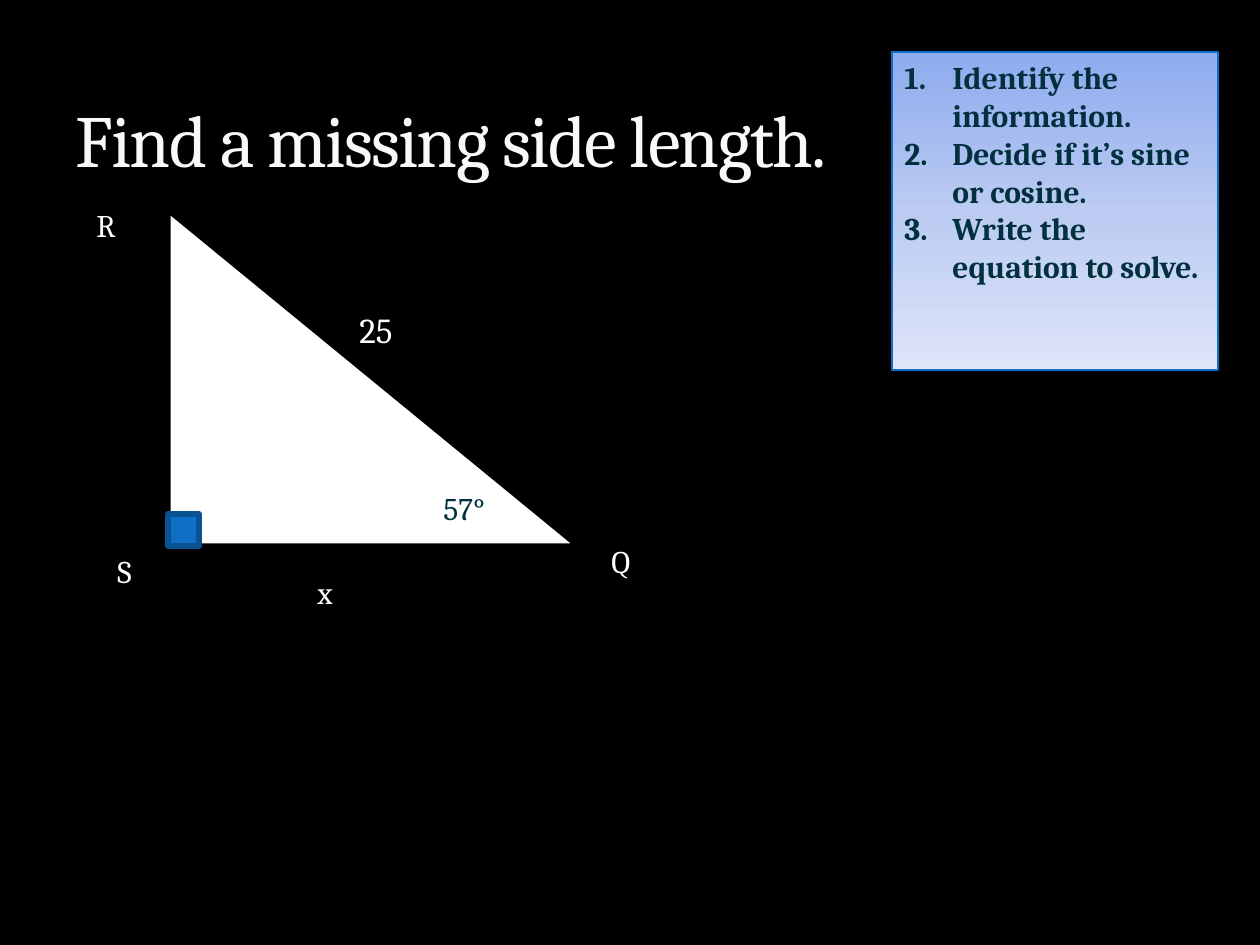
"""Build a trigonometry slide: a right triangle with labels and a list of steps."""
from copy import deepcopy

from lxml import etree
from pptx import Presentation
from pptx.dml.color import RGBColor
from pptx.enum.shapes import MSO_SHAPE
from pptx.enum.text import MSO_ANCHOR, MSO_AUTO_SIZE, PP_ALIGN
from pptx.oxml.ns import qn
from pptx.util import Pt

RECT, TRIANGLE = MSO_SHAPE.RECTANGLE, MSO_SHAPE.RIGHT_TRIANGLE
TOP, BOTTOM = MSO_ANCHOR.TOP, MSO_ANCHOR.BOTTOM
LEFT, NO_FIT = PP_ALIGN.LEFT, MSO_AUTO_SIZE.NONE
BLACK = RGBColor(0x00, 0x00, 0x00)
WHITE = RGBColor(0xFF, 0xFF, 0xFF)
OFF_WHITE = RGBColor(0xF9, 0xF9, 0xF9)
INK = RGBColor(0x02, 0x30, 0x3E)
BLUE = RGBColor(0x0F, 0x6F, 0xC6)
DARK_BLUE = RGBColor(0x0B, 0x52, 0x92)
GRADIENT = [(0, RGBColor(0x8E, 0xAB, 0xEE)),
            (0.5, RGBColor(0xBB, 0xCB, 0xF2)),
            (1, RGBColor(0xDE, 0xE5, 0xF8))]
FONT = "Cambria"
SCALE = 914400 / 126

TITLE = "Find a missing side length."
TITLE_BOX = (63, 21, 1134, 168)
STEPS = ["Identify the information.",
         "Decide if it’s sine or cosine.",
         "Write the equation to solve."]
STEPS_BOX = (892, 52, 326, 318)
STEP_INDENT = 48
SHAPES = [(TRIANGLE, (168, 210, 410, 336), WHITE, BLACK),
          (RECT, (168, 514, 31, 32), BLUE, DARK_BLUE)]
LABELS = [("Q", (599, 536, 63, 50), 18, WHITE),
          ("R", (84, 200, 63, 52), 18, WHITE),
          ("S", (105, 546, 74, 50), 18, WHITE),
          ("x", (305, 567, 63, 50), 18, WHITE),
          ("25", (347, 302, 147, 56), 20, WHITE),
          ("57°", (431, 483, 94, 50), 18, INK)]


def emu(px):
    return round(px * SCALE)


def place(box):
    return [emu(v) for v in box]


def write(s, lines, size, color, bold=False, anchor=TOP):
    tf = s.text_frame
    frame = {"word_wrap": True, "auto_size": NO_FIT, "vertical_anchor": anchor}
    for name, value in frame.items():
        setattr(tf, name, value)
    for i, line in enumerate(lines):
        p = tf.add_paragraph() if i else tf.paragraphs[0]
        p.alignment = LEFT
        r = p.add_run()
        r.text = line
        r.font.color.rgb = color
        for name, value in {"name": FONT, "size": Pt(size), "bold": bold}.items():
            setattr(r.font, name, value)
    return tf


def add_outlined(slide, kind, box, line, width):
    s = slide.shapes.add_shape(kind, *place(box))
    s.shadow.inherit = False
    s.line.color.rgb = line
    s.line.width = Pt(width)
    return s


def fill_gradient(fill):
    fill.gradient()
    fill.gradient_angle = 270
    first = fill.gradient_stops[0]
    stops = first._gs.getparent()
    stops.insert(1, deepcopy(stops[0]))
    for stop, (position, color) in zip(fill.gradient_stops, GRADIENT):
        stop.position = position
        stop.color.rgb = color


def number(p):
    pPr = p._p.get_or_add_pPr()
    pPr.set("marL", str(emu(STEP_INDENT)))
    pPr.set("indent", str(-emu(STEP_INDENT)))
    etree.SubElement(pPr, qn("a:buFont"), typeface="+mj-lt")
    etree.SubElement(pPr, qn("a:buAutoNum"), type="arabicPeriod")


def main():
    prs = Presentation()
    prs.slide_width, prs.slide_height = emu(1260), emu(945)
    slide = prs.slides.add_slide(prs.slide_layouts[5])
    slide.background.fill.solid()
    slide.background.fill.fore_color.rgb = BLACK

    title = slide.shapes.title
    title.left, title.top, title.width, title.height = place(TITLE_BOX)
    tf = write(title, [TITLE], 42, OFF_WHITE, anchor=BOTTOM)
    tf.paragraphs[0].runs[0].font._element.set("spc", "-100")

    for kind, box, fill, line in SHAPES:
        s = add_outlined(slide, kind, box, line, 3)
        s.fill.solid()
        s.fill.fore_color.rgb = fill

    for text, box, size, color in LABELS:
        write(slide.shapes.add_textbox(*place(box)), [text], size, color)

    s = add_outlined(slide, RECT, STEPS_BOX, BLUE, 0.75)
    fill_gradient(s.fill)
    for p in write(s, STEPS, 18, INK, bold=True).paragraphs:
        number(p)

    prs.save("out.pptx")


if __name__ == "__main__":
    main()
